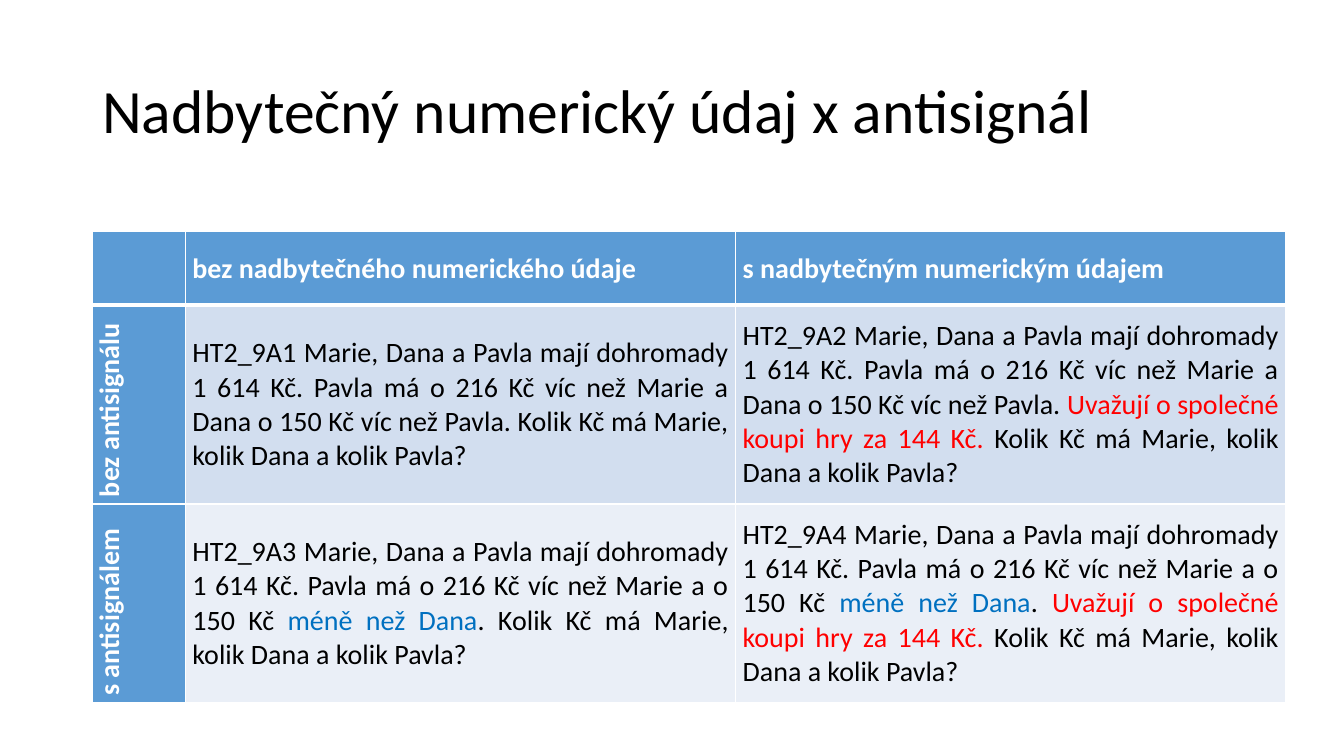
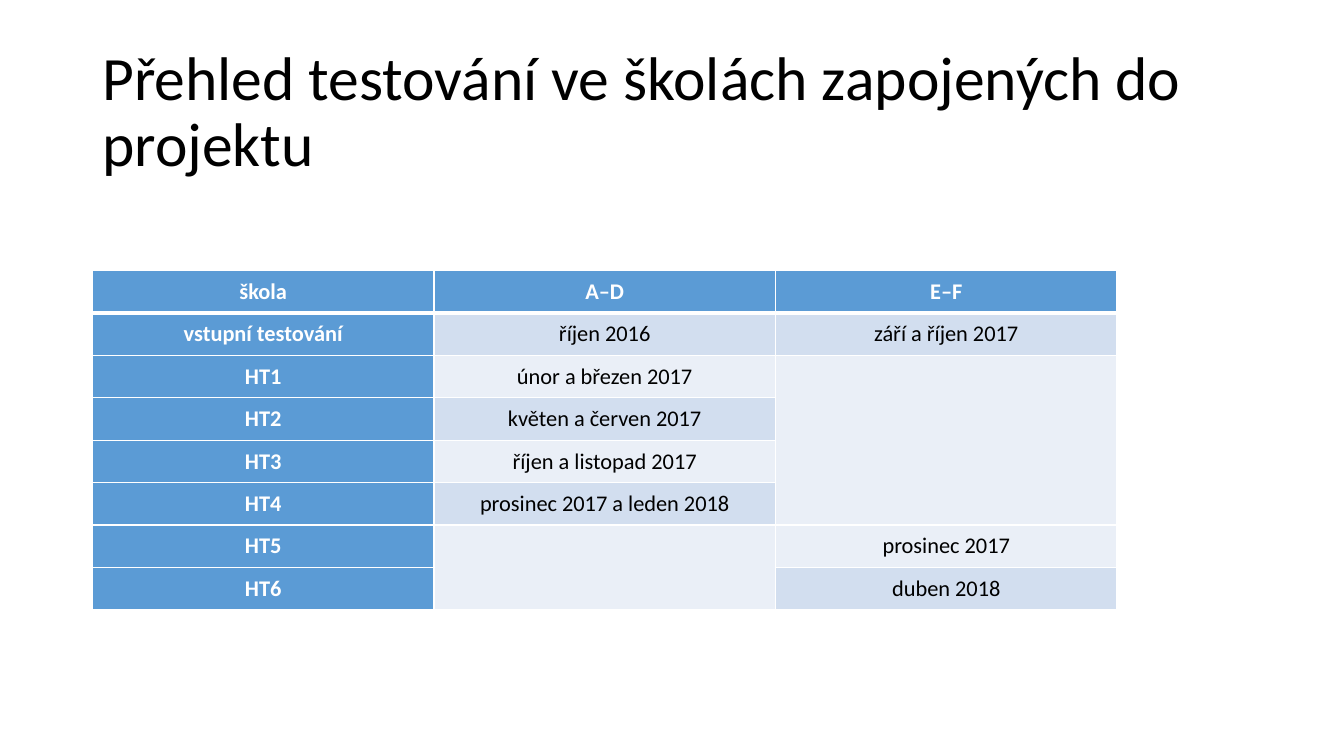
from dataclasses import dataclass

from lxml.etree import SubElement
from pptx import Presentation
from pptx.dml.color import RGBColor
from pptx.enum.text import MSO_ANCHOR as Anchor, PP_ALIGN as Align
from pptx.oxml.ns import qn
from pptx.util import Pt


@dataclass(frozen=True)
class Theme:
    """Colours, type sizes and line widths shared by the slides."""
    font: str = "Calibri"
    title_size: float = 44
    task_size: float = 20
    schedule_size: float = 16
    black: str = "000000"
    white: str = "FFFFFF"
    header: str = "5B9BD5"
    bands: tuple = ("EAEFF7", "D2DEEF")
    red: str = "FF0000"
    blue: str = "0070C0"
    thin: float = 1
    thick: float = 3
    inset: float = 5


@dataclass(frozen=True)
class Box:
    """A rectangle in points."""
    left: float
    top: float
    width: float
    height: float

    def lengths(self):
        """Return the four sides as lengths."""
        return Pt(self.left), Pt(self.top), Pt(self.width), Pt(self.height)


THEME = Theme()
TITLE_BOX = Box(66, 28.75, 828, 104.4)
TASK_BOX = Box(66, 165.6, 852.5, 336.3)
SCHEDULE_BOX = Box(66, 193.2, 732, 242.6)

GAME = "Uvažují o společné koupi hry za 144 Kč."
QUESTION = "Kolik Kč má Marie, kolik Dana a kolik Pavla?"
LESS = ("méně než Dana", THEME.blue)
TASK_ROWS = [
    ["", "bez nadbytečného numerického údaje", "s nadbytečným numerickým údajem"],
    ["bez antisignálu",
     "HT2_9A1 Marie, Dana a Pavla mají dohromady 1 614 Kč. Pavla má o 216 Kč víc než Marie "
     "a Dana o 150 Kč víc než Pavla. " + QUESTION,
     ["HT2_9A2 Marie, Dana a Pavla mají dohromady 1 614 Kč. Pavla má o 216 Kč víc než Marie "
      "a Dana o 150 Kč víc než Pavla. ", (GAME + " ", THEME.red), QUESTION]],
    ["s antisignálem",
     ["HT2_9A3 Marie, Dana a Pavla mají dohromady 1 614 Kč. Pavla má o 216 Kč víc než Marie "
      "a o 150 Kč ", LESS, ". " + QUESTION],
     ["HT2_9A4 Marie, Dana a Pavla mají dohromady 1 614 Kč. Pavla má o 216 Kč víc než Marie "
      "a o 150 Kč ", LESS, ". ", (GAME, THEME.red), " " + QUESTION]],
]
SCHEDULE_ROWS = [
    ["škola", "A–D", "E–F"],
    ["vstupní testování", "říjen 2016", "září a říjen 2017"],
    ["HT1", "únor a březen 2017", ""],
    ["HT2", "květen a červen 2017", ""],
    ["HT3", "říjen a listopad 2017", ""],
    ["HT4", "prosinec 2017 a leden 2018", ""],
    ["HT5", "", "prosinec 2017"],
    ["HT6", "", "duben 2018"],
]
SCHEDULE_MERGES = [((2, 2), (5, 2)), ((6, 1), (7, 1))]


def add_run(paragraph, text, size, color, bold=False):
    """Append one styled run to a paragraph."""
    run = paragraph.add_run()
    run.text = text
    run.font.name = THEME.font
    run.font.size = Pt(size)
    run.font.bold = bold
    run.font.color.rgb = RGBColor.from_string(color)


def add_title(slide, box, text):
    """Place the slide title in its box."""
    frame = slide.shapes.add_textbox(*box.lengths()).text_frame
    frame.word_wrap = True
    frame.vertical_anchor = Anchor.MIDDLE
    paragraph = frame.paragraphs[0]
    paragraph.line_spacing = 0.9
    add_run(paragraph, text, THEME.title_size, THEME.black)


def set_borders(cell, row):
    """Draw white cell borders, with a thick rule under the header row."""
    properties = cell._tc.get_or_add_tcPr()
    thick_side = {0: "lnB", 1: "lnT"}.get(row)
    for side in ("lnL", "lnR", "lnT", "lnB"):
        width = THEME.thick if side == thick_side else THEME.thin
        line = SubElement(properties, qn(f"a:{side}"), w=str(Pt(width)))
        fill = SubElement(line, qn("a:solidFill"))
        SubElement(fill, qn("a:srgbClr"), val=THEME.white)


def fill_cell(cell, row, column, content, size, align):
    """Style one cell and write its runs."""
    is_header = row == 0 or column == 0
    set_borders(cell, row)
    cell.fill.solid()
    color = THEME.header if is_header else THEME.bands[row % 2]
    cell.fill.fore_color.rgb = RGBColor.from_string(color)
    cell.margin_left = cell.margin_right = Pt(THEME.inset)
    cell.margin_top = cell.margin_bottom = 0
    cell.vertical_anchor = Anchor.MIDDLE
    paragraph = cell.text_frame.paragraphs[0]
    paragraph.alignment = align
    text_color = THEME.white if is_header else THEME.black
    for part in [content] if isinstance(content, str) else content:
        text, run_color = (part, text_color) if isinstance(part, str) else part
        if text:
            add_run(paragraph, text, size, run_color, is_header)


def add_grid(slide, box, rows, size, align, first_width, first_height, merges=()):
    """Place a banded table whose first row and column are headers."""
    row_count, column_count = len(rows), len(rows[0])
    table = slide.shapes.add_table(row_count, column_count, *box.lengths()).table
    table.first_row = table.horz_banding = False
    other_width = (box.width - first_width) / (column_count - 1)
    other_height = (box.height - first_height) / (row_count - 1)
    for index, column in enumerate(table.columns):
        column.width = Pt(other_width if index else first_width)
    for index, row in enumerate(table.rows):
        row.height = Pt(other_height if index else first_height)
    for row, contents in enumerate(rows):
        for column, content in enumerate(contents):
            fill_cell(table.cell(row, column), row, column, content, size, align)
    for first, last in merges:
        table.cell(*first).merge(table.cell(*last))
    return table


def add_task_slide(slide):
    """Build the slide that compares the four word problems."""
    add_title(slide, TITLE_BOX, "Nadbytečný numerický údaj x antisignál")
    table = add_grid(slide, TASK_BOX, TASK_ROWS, THEME.task_size, Align.JUSTIFY, 66.5, 52.5)
    for row in range(1, len(TASK_ROWS)):
        table.cell(row, 0)._tc.get_or_add_tcPr().set("vert", "vert270")


def add_schedule_slide(slide):
    """Build the slide that lists the test dates by school."""
    add_title(slide, TITLE_BOX, "Přehled testování ve školách zapojených do projektu")
    add_grid(slide, SCHEDULE_BOX, SCHEDULE_ROWS, THEME.schedule_size, Align.CENTER,
             SCHEDULE_BOX.width / len(SCHEDULE_ROWS[0]),
             SCHEDULE_BOX.height / len(SCHEDULE_ROWS), SCHEDULE_MERGES)


def main():
    """Build and save the presentation."""
    presentation = Presentation()
    presentation.slide_width, presentation.slide_height = Pt(960), Pt(540)
    for build in (add_task_slide, add_schedule_slide):
        build(presentation.slides.add_slide(presentation.slide_layouts[6]))
    presentation.save("out.pptx")


if __name__ == "__main__":
    main()
